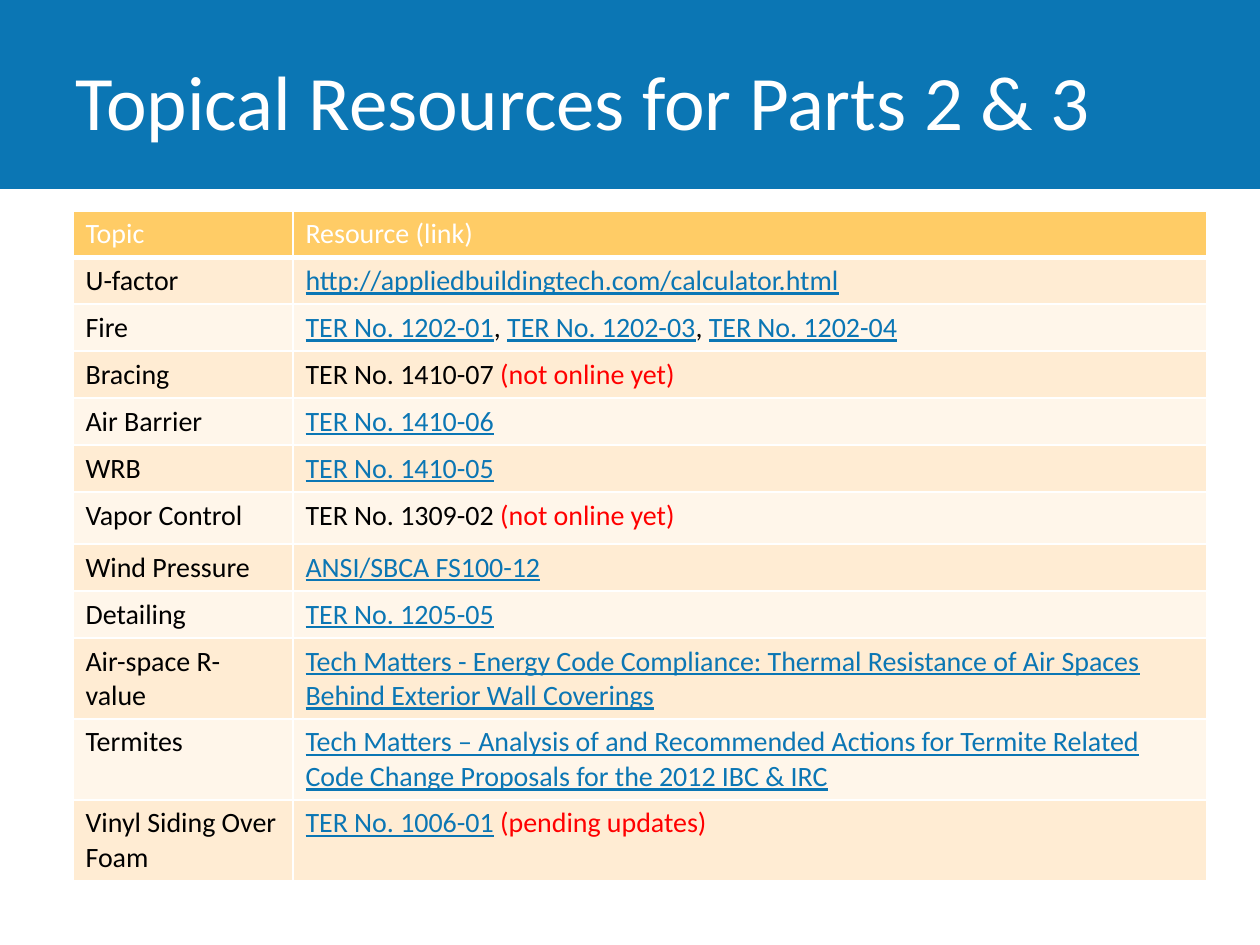
from dataclasses import dataclass

from lxml.etree import SubElement
from pptx import Presentation
from pptx.dml.color import RGBColor
from pptx.enum.shapes import MSO_SHAPE
from pptx.enum.text import MSO_ANCHOR
from pptx.oxml.ns import qn
from pptx.util import Emu, Pt

EMU_PER_PX = 914400 / 126


@dataclass(frozen=True)
class Theme:
    font: str = "Calibri"
    title_size: int = 44
    table_size: int = 16
    banner: str = "0B76B4"
    white: str = "FFFFFF"
    text: str = "000000"
    link: str = "0B76B4"
    note: str = "FF0000"
    header: str = "FFCC66"
    bands: tuple = ("FFECD3", "FFF6EA")


THEME = Theme()

TITLE = "Topical Resources for Parts 2 & 3"
HEADINGS = ("Topic", "Resource (link)")
COLUMN_WIDTHS = (220, 914)
HEADER_HEIGHT = 46

# Row heights by kind of row
SINGLE, TALL, DOUBLE = 47, 52, 81

# Topic, row height, resource as (wording, style) runs
RESOURCES = [
    ("U-factor", SINGLE, [("http://appliedbuildingtech.com/calculator.html", "link")]),
    ("Fire", SINGLE, [("TER No. 1202-01", "link"), (", ", "text"),
                      ("TER No. 1202-03", "link"), (", ", "text"),
                      ("TER No. 1202-04", "link")]),
    ("Bracing", SINGLE, [("TER No. 1410-07 ", "text"), ("(not online yet)", "note")]),
    ("Air Barrier", SINGLE, [("TER No. 1410-06", "link")]),
    ("WRB", SINGLE, [("TER No. 1410-05", "link")]),
    ("Vapor Control", TALL, [("TER No. 1309-02 ", "text"), ("(not online yet)", "note")]),
    ("Wind Pressure", SINGLE, [("ANSI/SBCA FS100-12", "link")]),
    ("Detailing", SINGLE, [("TER No. 1205-05", "link")]),
    ("Air-space R-value", DOUBLE, [
        ("Tech Matters - Energy Code Compliance: Thermal Resistance of Air Spaces "
         "Behind Exterior Wall Coverings", "link")]),
    ("Termites", DOUBLE, [
        ("Tech Matters – Analysis of and Recommended Actions for Termite Related "
         "Code Change Proposals for the 2012 IBC & IRC", "link")]),
    ("Vinyl Siding Over Foam", DOUBLE, [
        ("TER No. 1006-01", "link"), (" ", "text"), ("(pending updates)", "note")]),
]


def px(length):
    return Emu(round(length * EMU_PER_PX))


def add_run(paragraph, wording, style, size):
    run = paragraph.add_run()
    run.text = wording
    run.font.name = THEME.font
    run.font.size = Pt(size)
    run.font.color.rgb = RGBColor.from_string(getattr(THEME, style))
    if style == "link":
        run.font.underline = True


def set_borders(cell, bottom_width):
    properties = cell._tc.get_or_add_tcPr()
    widths = {"a:lnL": 1, "a:lnR": 1, "a:lnT": 1, "a:lnB": bottom_width}
    for side, width in widths.items():
        line = SubElement(properties, qn(side), w=str(Pt(width)))
        fill = SubElement(line, qn("a:solidFill"))
        SubElement(fill, qn("a:srgbClr"), val=THEME.white)


def fill_cell(cell, runs, fill, bottom_width=1):
    set_borders(cell, bottom_width)
    cell.fill.solid()
    cell.fill.fore_color.rgb = RGBColor.from_string(fill)
    for wording, style in runs:
        add_run(cell.text_frame.paragraphs[0], wording, style, THEME.table_size)


def add_banner(slide, left, top, width, height):
    # Blue band
    band = slide.shapes.add_shape(
        MSO_SHAPE.RECTANGLE, px(left), px(top), px(width), px(height))
    band.shadow.inherit = False
    band.fill.solid()
    band.fill.fore_color.rgb = RGBColor.from_string(THEME.banner)
    band.line.fill.background()

    # Title
    title = slide.shapes.add_textbox(
        px(left + 63), px(top + 21), px(width - 2 * 63), px(height - 31))
    title.text_frame.word_wrap = True
    title.text_frame.vertical_anchor = MSO_ANCHOR.MIDDLE
    add_run(title.text_frame.paragraphs[0], TITLE, "white", THEME.title_size)


def add_resource_table(slide, left, top, width, height):
    resources = slide.shapes.add_table(
        len(RESOURCES) + 1, len(HEADINGS), px(left), px(top), px(width), px(height)).table
    for column, column_width in zip(resources.columns, COLUMN_WIDTHS):
        column.width = px(column_width)

    # Header row
    resources.rows[0].height = px(HEADER_HEIGHT)
    for column, heading in enumerate(HEADINGS):
        fill_cell(resources.cell(0, column), [(heading, "white")], THEME.header, 3)

    # Banded topic rows
    for row, (topic, row_height, links) in enumerate(RESOURCES, start=1):
        resources.rows[row].height = px(row_height)
        band = THEME.bands[(row - 1) % 2]
        fill_cell(resources.cell(row, 0), [(topic, "text")], band)
        fill_cell(resources.cell(row, 1), links, band)


def main():
    deck = Presentation()
    deck.slide_width, deck.slide_height = px(1260), px(945)
    slide = deck.slides.add_slide(deck.slide_layouts[6])
    add_banner(slide, 0, 0, 1260, 189)
    table_height = HEADER_HEIGHT + sum(height for _, height, _ in RESOURCES)
    add_resource_table(slide, 73, 211, sum(COLUMN_WIDTHS), table_height)
    deck.save("out.pptx")


if __name__ == "__main__":
    main()
